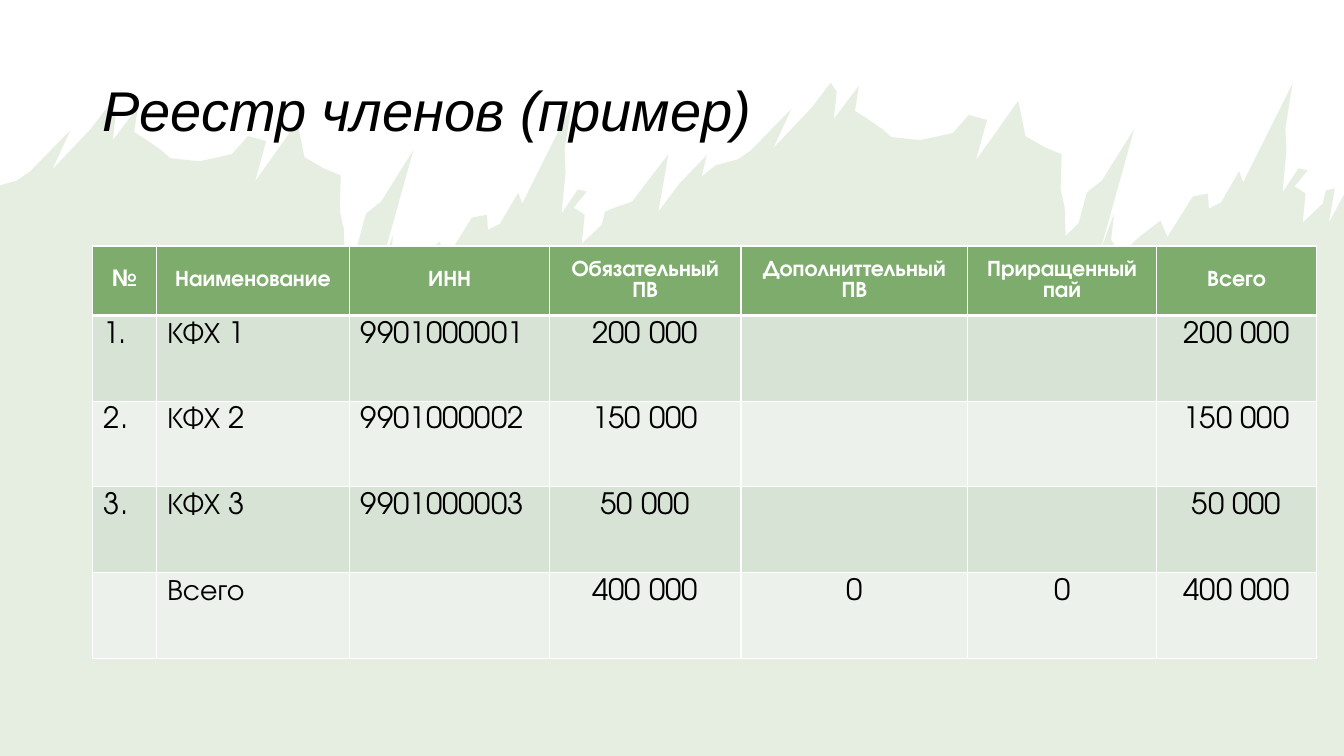
from lxml import etree
from pptx import Presentation
from pptx.dml.color import RGBColor
from pptx.enum.shapes import MSO_SHAPE
from pptx.enum.text import MSO_ANCHOR, PP_ALIGN
from pptx.oxml.ns import qn
from pptx.util import Inches, Pt

RECTANGLE = MSO_SHAPE.RECTANGLE
MIDDLE, TOP = MSO_ANCHOR.MIDDLE, MSO_ANCHOR.TOP
LEFT, CENTER = PP_ALIGN.LEFT, PP_ALIGN.CENTER

WHITE = RGBColor(0xFF, 0xFF, 0xFF)
BLACK = RGBColor(0x00, 0x00, 0x00)
GREEN = RGBColor(0x7D, 0xAC, 0x6C)
BANDS = (RGBColor(0xD7, 0xE3, 0xD4), RGBColor(0xEC, 0xF1, 0xEB))

SLIDE_WIDTH, SLIDE_HEIGHT = 13.33, 7.5
TITLE_FONT, TABLE_FONT = "Arial", "TeX Gyre Adventor"

RIDGE_SHIFT = (7.15, -0.21)
RIDGE = [
    (0.17, 1.79), (0.3, 1.7), (0.7, 1.29), (0.52, 1.68), (0.9, 1.28), (1.09, 1.03),
    (1.15, 1.12), (1.12, 1.39), (1.37, 1.06), (1.33, 1.31), (1.44, 1.38), (1.6, 1.49),
    (1.69, 1.57), (1.98, 1.6), (2.3, 1.53), (2.46, 1.35), (2.64, 1.4), (2.53, 1.8),
    (2.95, 1.21), (3.02, 1.56), (3.21, 1.67), (3.38, 1.74), (3.37, 2.09), (3.41, 2.27),
    (3.42, 2.55), (3.55, 2.42), (3.63, 2.12), (3.78, 2), (4.1, 1.49), (3.76, 2.71),
    (3.9, 2.33), (3.87, 2.59), (3.97, 2.73), (4.15, 2.56), (4.36, 2.4), (4.43, 2.56),
    (4.68, 2.16), (4.83, 2.13), (4.84, 2.28), (4.96, 2.22), (5.14, 1.91), (5.18, 2.02),
    (5.67, 1.04), (5.6, 1.48), (5.61, 1.71), (5.57, 2.12), (5.73, 1.88), (5.82, 1.9),
    (5.69, 2.06), (5.8, 2.13), (5.77, 2.42), (5.97, 2.23), (6, 2.1),
]
RIDGE_JOIN = [
    (6.07, 2.07), (6.27, 2), (6.43, 1.79), (6.63, 1.53), (6.53, 2.1),
    (6.74, 1.82), (7.01, 1.54), (6.96, 1.75), (7.1, 1.64),
]
RIDGE_END = [(13.24, 1.87), (13.18, 2.21), (13.33, 1.93)]

COLUMN_WIDTHS = (0.63, 1.92, 1.98, 1.9, 2.25, 1.87, 1.59)
ROW_HEIGHTS = (0.69,) + (0.85,) * 4
TEXT_COLUMNS = 3
MEMBERS = (
    ("№", "Наименование", "ИНН", "Обязательный ПВ", "Дополниттельный ПВ", "Приращенный пай", "Всего"),
    ("1.", "КФХ 1", "9901000001", "200 000", "", "", "200 000"),
    ("2.", "КФХ 2", "9901000002", "150 000", "", "", "150 000"),
    ("3.", "КФХ 3", "9901000003", "50 000", "", "", "50 000"),
    ("", "Всего", "", "400 000", "0", "0", "400 000"),
)


class SlideBuilder:
    """Draws the elements of one slide in a common style."""

    def __init__(self, presentation):
        self.slide = presentation.slides.add_slide(presentation.slide_layouts[5])
        self.shapes = self.slide.shapes

    def paint(self, shape, color, opacity=100):
        shape.shadow.inherit = False
        shape.line.fill.background()
        shape.fill.solid()
        shape.fill.fore_color.rgb = color
        if opacity < 100:
            tint = shape.element.spPr.find(".//" + qn("a:srgbClr"))
            etree.SubElement(tint, qn("a:alpha"), val=str(opacity * 1000))

    def rectangle(self, left, top, width, height, color):
        shape = self.shapes.add_shape(RECTANGLE, Inches(left), Inches(top), Inches(width), Inches(height))
        self.paint(shape, color)

    def outline(self, points, color, opacity):
        corners = [(Inches(x), Inches(y)) for x, y in points]
        builder = self.shapes.build_freeform(*corners[0])
        builder.add_line_segments(corners[1:], close=True)
        self.paint(builder.convert_to_shape(), color, opacity)

    def format_text(self, paragraph, font_name, size, color, alignment, bold=False, italic=False):
        paragraph.alignment = alignment
        for run in paragraph.runs:
            font = run.font
            font.name, font.size, font.bold, font.italic = font_name, Pt(size), bold, italic
            font.color.rgb = color

    def title(self, text, left, top, width, height):
        title = self.shapes.title
        title.left, title.top, title.width, title.height = map(Inches, (left, top, width, height))
        title.text_frame.text = text
        title.text_frame.vertical_anchor = MIDDLE
        paragraph = title.text_frame.paragraphs[0]
        paragraph.line_spacing = 0.9
        self.format_text(paragraph, TITLE_FONT, 40, BLACK, LEFT, italic=True)
        self.shapes.element.append(title.element)

    def border(self, cell, side, width):
        line = etree.SubElement(cell._tc.get_or_add_tcPr(), qn("a:ln" + side), w=str(Pt(width)))
        fill = etree.SubElement(line, qn("a:solidFill"))
        etree.SubElement(fill, qn("a:srgbClr"), val=str(WHITE))

    def cell(self, cell, text, row, column):
        header = row == 0
        for side in "LRTB":
            thick = (header and side == "B") or (row == 1 and side == "T")
            self.border(cell, side, 3 if thick else 1)
        cell.fill.solid()
        cell.fill.fore_color.rgb = GREEN if header else BANDS[(row - 1) % 2]
        cell.margin_left = cell.margin_right = Inches(0.11)
        cell.margin_top = cell.margin_bottom = Inches(0.06)
        cell.vertical_anchor = MIDDLE if header else TOP
        cell.text_frame.text = text
        alignment = CENTER if header or column >= TEXT_COLUMNS else LEFT
        size, color = (16, WHITE) if header else (21, BLACK)
        self.format_text(cell.text_frame.paragraphs[0], TABLE_FONT, size, color, alignment, bold=header)

    def table(self, rows, left, top):
        frame = self.shapes.add_table(len(rows), len(COLUMN_WIDTHS), Inches(left), Inches(top),
                                      Inches(sum(COLUMN_WIDTHS)), Inches(sum(ROW_HEIGHTS)))
        table = frame.table
        for column, width in zip(table.columns, COLUMN_WIDTHS):
            column.width = Inches(width)
        for row, height in zip(table.rows, ROW_HEIGHTS):
            row.height = Inches(height)
        for row, texts in enumerate(rows):
            for column, text in enumerate(texts):
                self.cell(table.cell(row, column), text, row, column)


def main():
    presentation = Presentation()
    presentation.slide_width, presentation.slide_height = Inches(SLIDE_WIDTH), Inches(SLIDE_HEIGHT)
    builder = SlideBuilder(presentation)
    builder.rectangle(0, 0, SLIDE_WIDTH, SLIDE_HEIGHT, WHITE)
    shift_x, shift_y = RIDGE_SHIFT
    shifted_ridge = [(x + shift_x, y + shift_y) for x, y in RIDGE]
    base = [(SLIDE_WIDTH, SLIDE_HEIGHT), (0, SLIDE_HEIGHT), (0, 1.84)]
    builder.outline(RIDGE + RIDGE_JOIN + shifted_ridge + RIDGE_END + base, GREEN, 20)
    builder.title("Реестр членов (пример)", 0.92, 0.4, 11.5, 1.45)
    builder.table(MEMBERS, 0.92, 2.44)
    presentation.save("out.pptx")


if __name__ == "__main__":
    main()
